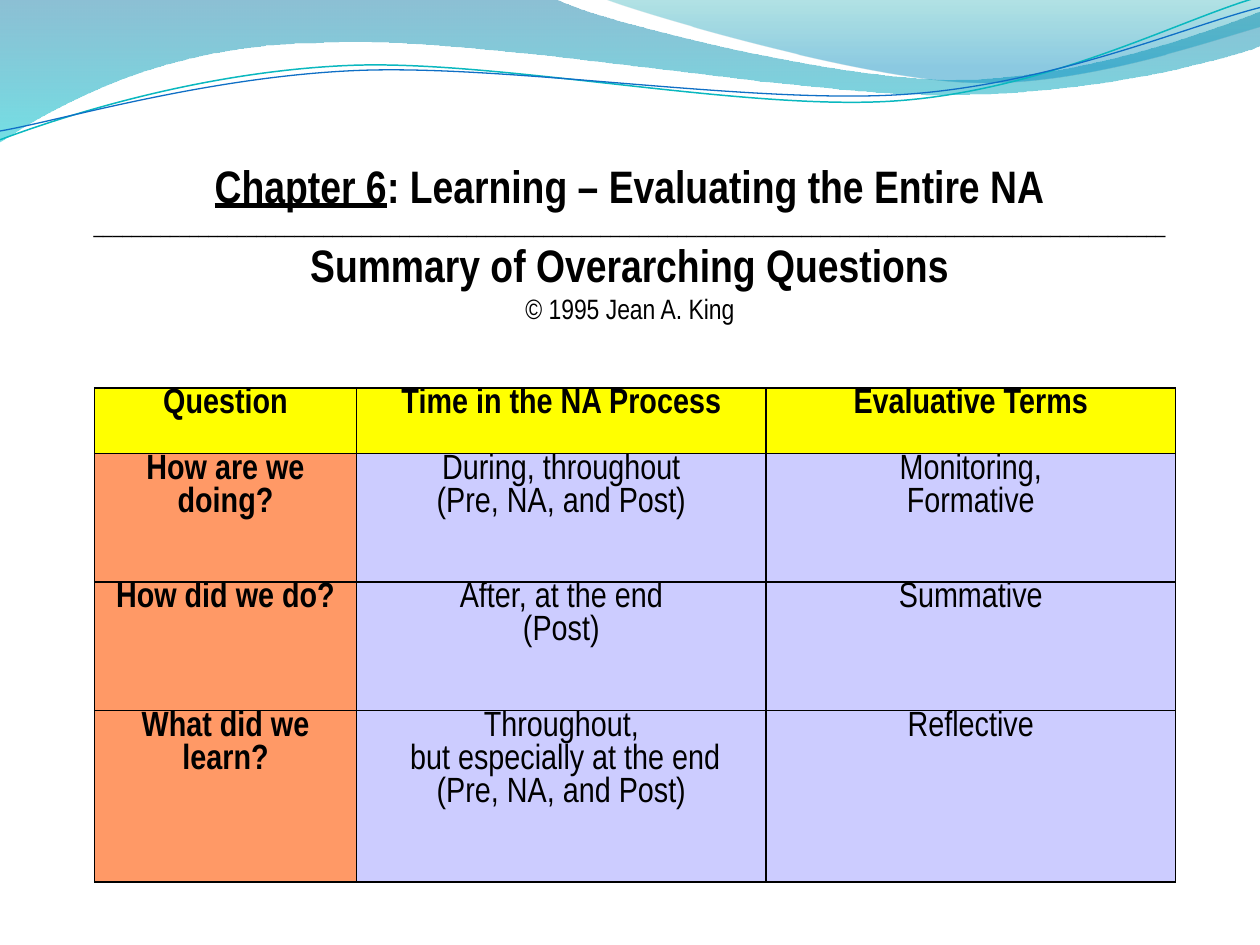
import pptx
import pptx.util
import pptx.dml.color
import pptx.enum.text
import pptx.oxml
import pptx.oxml.ns
from lxml import etree

Inches = pptx.util.Inches
Pt = pptx.util.Pt
RGBColor = pptx.dml.color.RGBColor
qn = pptx.oxml.ns.qn
CENTER = pptx.enum.text.PP_ALIGN.CENTER

BLACK = RGBColor(0, 0, 0)
YELLOW = RGBColor(0xFF, 0xFF, 0)
ORANGE = RGBColor(0xFF, 0x99, 0x66)
LILAC = RGBColor(0xCC, 0xCC, 0xFF)
BLUE = RGBColor(0x0F, 0x6F, 0xC6)
TEAL = RGBColor(0x0A, 0xB8, 0xBF)
DEEP = RGBColor(0, 0x74, 0xA1)
AQUA = RGBColor(0, 0xC6, 0xCF)
SEA = RGBColor(0, 0xA1, 0xA9)
SKY = RGBColor(0, 0x8B, 0xBF)
FONT = "Arial Narrow"

BAND = [(0, -0.01), (4.4, -0.01),
        (4.76, 0.17, 6.64, 0.63, 7.58, 0.63),
        (8.53, 0.63, 9.58, 0.26, 10, 0.09), (10.01, 0.36),
        (9.83, 0.44, 8.7, 0.76, 7.46, 0.75),
        (6.22, 0.75, 3.82, 0.28, 2.57, 0.34),
        (1.29, 0.35, 0.46, 0.83, -0.01, 1.13)]
CREST = [(4.79, -0.01), (5.09, 0.11, 6.82, 0.62, 7.69, 0.65),
         (8.56, 0.69, 9.61, 0.32, 10, 0.21), (10, 0)]
UPPER = [(0, 1.11), (0.48, 0.93, 1.58, 0.57, 2.77, 0.52),
         (3.95, 0.47, 5.93, 0.89, 7.13, 0.8),
         (8.33, 0.71, 9.38, 0.15, 9.98, -0.02)]
LOWER = [(0, 1.04), (0.47, 0.96, 1.64, 0.61, 2.83, 0.56),
         (4.03, 0.51, 5.97, 0.83, 7.17, 0.75),
         (8.36, 0.67, 9.41, 0.21, 10, 0.06)]

HEADS = [("Chapter 6: Learning – Evaluating the Entire NA", 26, True),
         ("_" * 112, 12, False),
         ("Summary of Overarching Questions", 26, True),
         ("© 1995 Jean A. King", 16, False)]
ROWS = [("Question", "Time in the NA Process", "Evaluative Terms"),
        ("How are we doing?", "During, throughout\n(Pre, NA, and Post)",
         "Monitoring,\nFormative"),
        ("How did we do?", "After, at the end\n(Post)", "Summative"),
        ("What did we learn?",
         "Throughout,\n but especially at the end\n(Pre, NA, and Post)",
         "Reflective")]
WIDTHS = [2.08, 3.25, 3.25]
HEIGHTS = [0.52, 1.02, 1.02, 1.36]


def add_curve(slide, path, close):
    """Draw a freeform whose six-number steps are cubic curves."""
    ends = [(Inches(step[-2]), Inches(step[-1])) for step in path]
    form = slide.shapes.build_freeform(*ends[0], scale=1)
    form.add_line_segments(ends[1:], close=close)
    shape = form.convert_to_shape()
    shape.shadow.inherit = False
    lines = list(shape.element.iter(qn("a:lnTo")))
    for line, step in zip(lines, path[1:]):
        if len(step) == 6:
            curve = etree.Element(qn("a:cubicBezTo"))
            for x, y in zip(step[::2], step[1::2]):
                etree.SubElement(curve, qn("a:pt"),
                                 x=str(Inches(x) - shape.left),
                                 y=str(Inches(y) - shape.top))
            line.getparent().replace(line, curve)
    return shape


def add_wave(slide, path, stops):
    """Draw a closed wave with a sheer gradient from top to bottom."""
    shape = add_curve(slide, path, True)
    shape.line.fill.background()
    shape.fill.gradient()
    shape.fill.gradient_angle = 270
    for stop, (place, color, _) in zip(shape.fill.gradient_stops, stops):
        stop.position = place
        stop.color.rgb = color
    tints = shape.element.spPr.iter(qn("a:srgbClr"))
    for tint, (_, _, alpha) in zip(tints, stops):
        etree.SubElement(tint, qn("a:alpha"), val=str(alpha * 1000))


def add_line(slide, path, color, width):
    """Draw an open curved line."""
    shape = add_curve(slide, path, False)
    shape.fill.background()
    shape.line.color.rgb = color
    shape.line.width = Pt(width)


def style(para, size, bold, space):
    """Center a paragraph and set its font and line spacing."""
    para.alignment = CENTER
    para.line_spacing = space
    font = para.font
    font.name, font.size, font.bold = FONT, Pt(size), bold
    font.color.rgb = BLACK


def add_heads(slide):
    """Fill the body placeholder with the heading lines."""
    title, body = slide.placeholders
    tree = title.element.getparent()
    tree.remove(title.element)
    tree.append(body.element)
    body.left, body.top = Inches(0.5), Inches(0.77)
    body.width, body.height = Inches(9), Inches(2.4)
    frame = body.text_frame
    frame.auto_size = pptx.enum.text.MSO_AUTO_SIZE.NONE
    frame.margin_top = Inches(0.54)
    frame.text = "\n".join(text for text, _, _ in HEADS)
    for para, (_, size, bold) in zip(frame.paragraphs, HEADS):
        style(para, size, bold, 0.87)
        para.space_before = Pt(size * 0.15)
        props = para._p.get_or_add_pPr()
        props.set("marL", "0")
        props.set("indent", "0")
        mark = etree.Element(qn("a:buNone"))
        props.insert_element_before(mark, "a:tabLst", "a:defRPr", "a:extLst")
    first = frame.paragraphs[0]
    first.space_before = Pt(0)
    first.text = ""
    for part, under in (("Chapter 6", True), (HEADS[0][0][9:], False)):
        run = first.add_run()
        run.text = part
        run.font.underline = under


def add_edges(cell):
    """Rule all four sides of a cell in black."""
    props = cell._tc.get_or_add_tcPr()
    for i, side in enumerate("LRTB"):
        edge = etree.Element(qn("a:ln" + side), w=str(Pt(1)))
        fill = etree.SubElement(edge, qn("a:solidFill"))
        etree.SubElement(fill, qn("a:srgbClr"), val=str(BLACK))
        props.insert(i, edge)


def add_grid(slide):
    """Add the table of questions."""
    table = slide.shapes.add_table(
        len(ROWS), len(WIDTHS), Inches(0.75), Inches(3.08),
        Inches(sum(WIDTHS)), Inches(sum(HEIGHTS))).table
    for col, width in zip(table.columns, WIDTHS):
        col.width = Inches(width)
    for r, texts in enumerate(ROWS):
        table.rows[r].height = Inches(HEIGHTS[r])
        for c, text in enumerate(texts):
            cell = table.cell(r, c)
            cell.text = text
            cell.margin_left = cell.margin_right = Inches(0.07)
            cell.margin_top = cell.margin_bottom = 0
            cell.fill.solid()
            cell.fill.fore_color.rgb = (
                YELLOW if r == 0 else ORANGE if c == 0 else LILAC)
            add_edges(cell)
            for para in cell.text_frame.paragraphs:
                style(para, 20, r == 0 or c == 0, 1.0)


def main():
    """Build the slide and save it."""
    deck = pptx.Presentation()
    deck.slide_width, deck.slide_height = Inches(10), Inches(7.5)
    slide = deck.slides.add_slide(deck.slide_layouts[1])
    add_wave(slide, BAND, [(0, DEEP, 45), (1, AQUA, 55)])
    add_wave(slide, CREST, [(0, SEA, 30), (0.8, SKY, 45)])
    add_line(slide, UPPER, TEAL, 0.85)
    add_line(slide, LOWER, BLUE, 0.75)
    add_heads(slide)
    add_grid(slide)
    deck.save("out.pptx")


if __name__ == "__main__":
    main()
